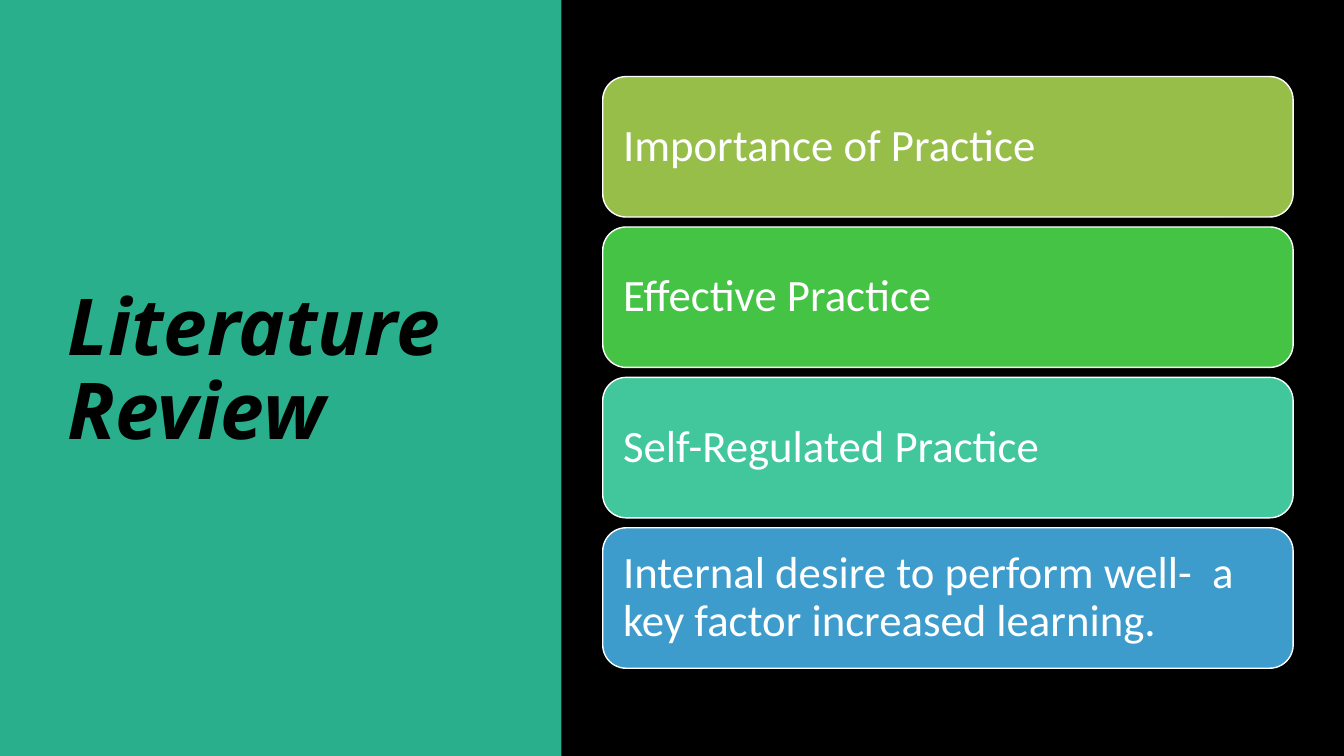
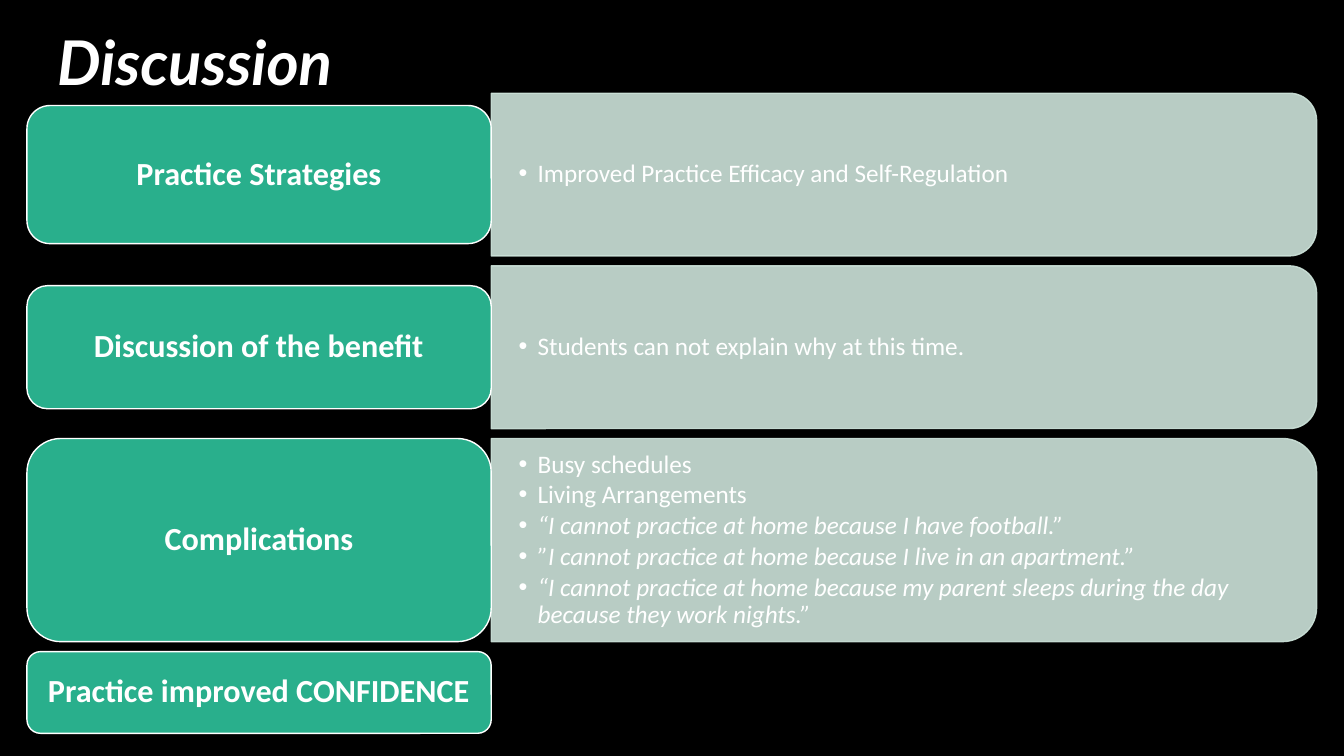
from lxml.etree import SubElement
from pptx import Presentation
from pptx.dml.color import RGBColor
from pptx.enum.shapes import MSO_SHAPE as Shape
from pptx.enum.text import MSO_ANCHOR as Anchor, MSO_AUTO_SIZE as AutoSize, PP_ALIGN as Align
from pptx.oxml.ns import qn
from pptx.util import Cm, Pt

COLORS = {
    "black": "000000",
    "white": "FFFFFF",
    "teal": "29AF8C",
    "olive": "97BE49",
    "green": "45C345",
    "mint": "41C79B",
    "blue": "3D9CCC",
    "pale": "CDE3DA",
}
WIDTH, HEIGHT = 33.87, 19.05
GAP = 0.25


def color(name):
    return RGBColor.from_string(COLORS[name])


class SlideBuilder:
    body_font = "Calibri"
    line_spacing = 0.9

    def __init__(self):
        self.deck = Presentation()
        self.deck.slide_width, self.deck.slide_height = Cm(WIDTH), Cm(HEIGHT)
        background = self.deck.slide_master.background.fill
        background.solid()
        background.fore_color.rgb = color("black")
        self.page = None

    def new_page(self):
        layout = self.deck.slide_layouts.get_by_name("Title Only")
        self.page = self.deck.slides.add_slide(layout)

    def frame(self, box, margins):
        frame = box.text_frame
        frame.word_wrap = True
        frame.auto_size = AutoSize.NONE
        frame.vertical_anchor = Anchor.MIDDLE
        frame.margin_left = frame.margin_right = Cm(margins[0])
        frame.margin_top = frame.margin_bottom = Cm(margins[1])
        return frame

    def add_text(self, para, text, size, font=body_font, ink="white",
                 bold=False, italic=False, align=Align.LEFT):
        para.alignment = align
        para.line_spacing = self.line_spacing
        para.space_before = Pt(0)
        span = para.add_run()
        span.text = text
        span.font.name = font
        span.font.size = Pt(size)
        span.font.bold = bold
        span.font.italic = italic
        span.font.color.rgb = color(ink)

    def title(self, text, left, top, width, height, size, font, ink):
        box = self.page.shapes.title
        box.left, box.top, box.width, box.height = map(Cm, (left, top, width, height))
        para = self.frame(box, (0.25, 0.13)).paragraphs[0]
        self.add_text(para, text, size, font, ink, bold=True, italic=True)

    def shape(self, kind, left, top, width, height, fill, line=None):
        box = self.page.shapes.add_shape(kind, *map(Cm, (left, top, width, height)))
        box.shadow.inherit = False
        box.fill.solid()
        box.fill.fore_color.rgb = color(fill)
        if line:
            box.line.color.rgb = color(line)
            box.line.width = Pt(1)
        else:
            box.line.fill.background()
        return box

    def side_band(self, width, fill):
        band = self.shape(Shape.RECTANGLE, 0, 0, width, HEIGHT, fill)
        self.page.shapes.title.element.addprevious(band.element)

    def card(self, text, left, top, width, height, fill, size, margins, **style):
        box = self.shape(Shape.ROUNDED_RECTANGLE, left, top, width, height, fill, "white")
        self.add_text(self.frame(box, margins).paragraphs[0], text, size, **style)

    def detail_panel(self, items, left, top, width, height):
        shift = (width - height) / 2
        panel = self.shape(Shape.ROUND_2_SAME_RECTANGLE, left + shift, top - shift,
                           height, width, "pale", "pale")
        panel.rotation = 90
        for tint in panel.element.spPr.iter(qn("a:srgbClr")):
            SubElement(tint, qn("a:alpha"), val="90000")
        box = self.page.shapes.add_textbox(*map(Cm, (left, top, width - 0.2, height)))
        frame = self.frame(box, (0.69, 0.36))
        for index, (text, italic) in enumerate(items):
            para = frame.add_paragraph() if index else frame.paragraphs[0]
            self.add_text(para, text, 18, italic=italic)
            para.space_after = Pt(2.5)
            self.bullet(para)

    def bullet(self, para):
        properties = para._p.get_or_add_pPr()
        properties.set("marL", str(Cm(0.48)))
        properties.set("indent", str(-Cm(0.48)))
        SubElement(properties, qn("a:buFont"), typeface="Arial")
        SubElement(properties, qn("a:buChar"), char="•")


def literature_review(builder):
    builder.new_page()
    builder.title("Literature Review", 1.45, 1.73, 10.57, 15.29, 56, "Noto Sans", "black")
    builder.side_band(14.15, "teal")
    topics = [
        ("Importance of Practice", "olive"),
        ("Effective Practice", "green"),
        ("Self-Regulated Practice", "mint"),
        ("Internal desire to perform well-  a key factor increased learning.", "blue"),
    ]
    card_height = 3.54
    for index, (text, fill) in enumerate(topics):
        top = 1.93 + index * (card_height + GAP)
        builder.card(text, 15.19, top, 17.4, card_height, fill, 32, (0.34, 0.34))


def discussion(builder):
    builder.new_page()
    builder.title("Discussion", 1.19, 0.53, 29.21, 2.26, 44, "Lato", "white")
    rows = [
        ("Practice Strategies", 4.1, 3.48,
         [("Improved Practice Efficacy and Self-Regulation", False)]),
        ("Discussion of the benefit", 4.1, 3.1,
         [("Students can not explain why at this time.", False)]),
        ("Complications", 5.12, 5.12, [
            ("Busy schedules", False),
            ("Living Arrangements", False),
            ("“I cannot practice at home because I have football.”", True),
            ("”I cannot practice at home because I live in an apartment.”", True),
            ("“I cannot practice at home because my parent sleeps during the day "
             "because they work nights.”", True),
        ]),
        ("Practice improved CONFIDENCE", 2.06, 2.06, []),
    ]
    left, label_width, top = 0.68, 11.7, 2.35
    for label, row_height, label_height, items in rows:
        if items:
            builder.detail_panel(items, left + label_width, top, 20.8, row_height)
        label_top = top + (row_height - label_height) / 2
        builder.card(label, left, label_top, label_width, label_height, "teal", 23,
                     (0.25, 0.13), bold=True, align=Align.CENTER)
        top += row_height + GAP


def main():
    builder = SlideBuilder()
    literature_review(builder)
    discussion(builder)
    builder.deck.save("out.pptx")


if __name__ == "__main__":
    main()
